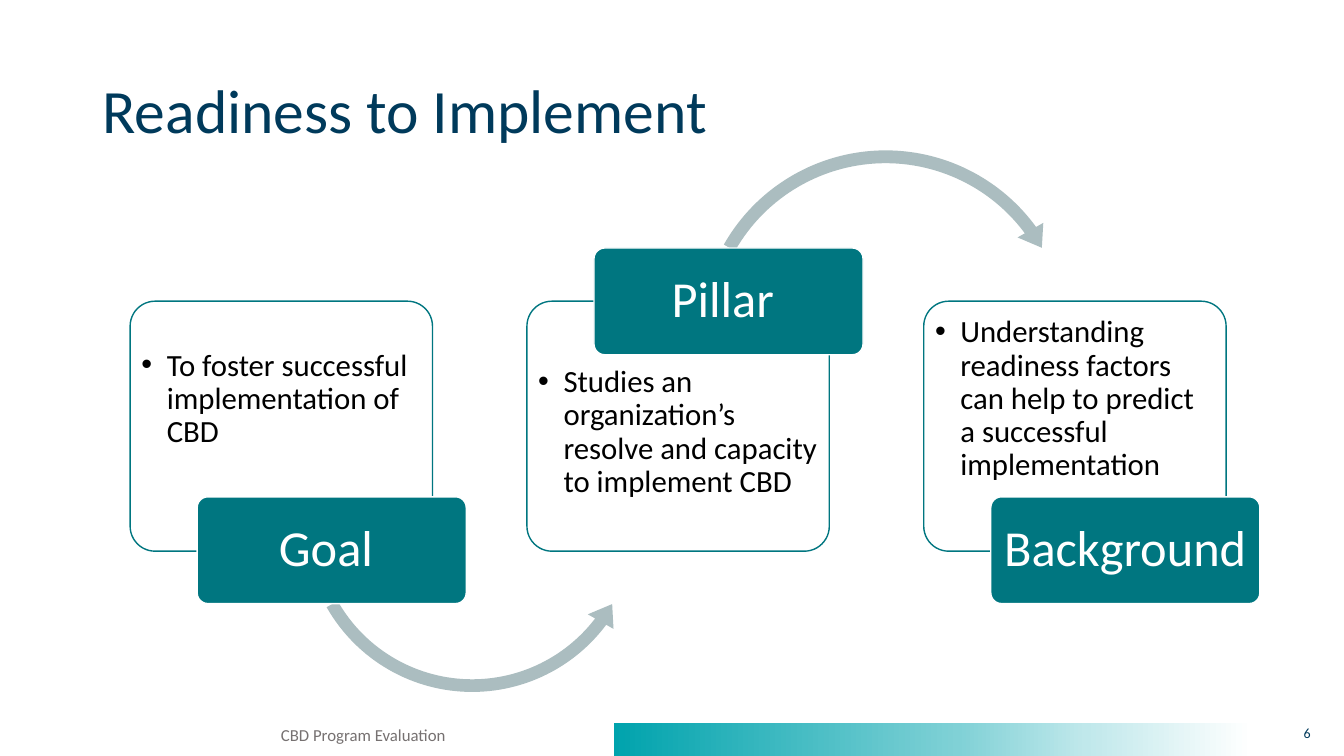
from lxml import etree
from pptx import Presentation
from pptx.dml.color import RGBColor
from pptx.enum.shapes import MSO_SHAPE
from pptx.enum.text import MSO_ANCHOR, PP_ALIGN
from pptx.oxml.ns import qn
from pptx.util import Cm, Pt

NAVY = RGBColor(0x00, 0x3A, 0x5B)
TEAL = RGBColor(0x00, 0x76, 0x80)
SILVER = RGBColor(0xAB, 0xBD, 0xC0)
GREY = RGBColor(0x76, 0x71, 0x71)
WHITE = RGBColor(0xFF, 0xFF, 0xFF)
BLACK = RGBColor(0x00, 0x00, 0x00)
BAND_STOPS = [(0, "00A3AD"), (54, "80D1D6"), (74, "C0E8EB"), (100, "FFFFFF")]

RECTANGLE = MSO_SHAPE.RECTANGLE
ROUNDED = MSO_SHAPE.ROUNDED_RECTANGLE
ARC_OVER = MSO_SHAPE.CIRCULAR_ARROW
ARC_UNDER = MSO_SHAPE.LEFT_CIRCULAR_ARROW
TOP, MIDDLE = MSO_ANCHOR.TOP, MSO_ANCHOR.MIDDLE
LEFT, CENTER, RIGHT = PP_ALIGN.LEFT, PP_ALIGN.CENTER, PP_ALIGN.RIGHT

FIRST_LEFT, COLUMN_STEP = 3.28, 10
CARD_TOP, CARD_WIDTH, CARD_HEIGHT = 7.59, 7.62, 6.3
LABEL_SHIFT, LABEL_WIDTH, LABEL_HEIGHT = 1.69, 6.78, 2.69
LABEL_HIGH, LABEL_LOW = 6.25, 12.52
CARD_INSET, CLEAR_OF_LABEL = 0.1, 1.45

STAGES = [
    ("Goal ", "To foster successful implementation of CBD", LABEL_LOW, MIDDLE,
     (ARC_UNDER, 7.47, 8.79, 8.86, [0.036, 4.475, 22.231, 90.245, 0.042])),
    ("Pillar ", "Studies an organization’s resolve and capacity to implement CBD",
     LABEL_HIGH, TOP,
     (ARC_OVER, 17.42, 3.58, 9.8, [0.033, 4.015, 194.229, 125.755, 0.038])),
    ("Background ",
     "Understanding readiness factors can help to predict a successful implementation",
     LABEL_LOW, MIDDLE, None),
]
FOOTERS = [
    ("CBD Program Evaluation ", 3.58, 11.25, 12, GREY, CENTER),
    ("6", 31.55, 1.73, 10, NAVY, RIGHT),
]


def add_block(kind, left, top, width, height, fill, line=None):
    block = slide.shapes.add_shape(kind, Cm(left), Cm(top), Cm(width), Cm(height))
    block.shadow.inherit = False
    block.fill.solid()
    block.fill.fore_color.rgb = fill
    if line is None:
        block.line.fill.background()
    else:
        block.line.color.rgb = line
        block.line.width = Pt(1)
    return block


def write(frame, text, size, color, align, bullet=False, spacing=0.9, **frame_format):
    for name, value in {"word_wrap": True, **frame_format}.items():
        setattr(frame, name, value)
    paragraph = frame.paragraphs[0]
    paragraph.text = text
    paragraph.alignment = align
    paragraph.line_spacing = spacing
    if bullet:
        properties = paragraph._p.get_or_add_pPr()
        properties.set("marL", str(Cm(0.64)))
        properties.set("indent", str(-Cm(0.64)))
        etree.SubElement(properties, qn("a:buFont")).set("typeface", "Arial")
        etree.SubElement(properties, qn("a:buChar")).set("char", "•")
    font = paragraph.runs[0].font
    font.color.rgb = color
    for name, value in {"name": "Calibri", "size": Pt(size)}.items():
        setattr(font, name, value)


prs = Presentation()
prs.slide_width, prs.slide_height = Cm(33.87), Cm(19.05)
slide = prs.slides.add_slide(prs.slide_layouts[5])

band = add_block(RECTANGLE, 15.47, 18.21, 16.08, 0.84, WHITE)
band.fill.gradient()
band.fill.gradient_angle = 0
stop_list = band._element.spPr.find(qn("a:gradFill")).find(qn("a:gsLst"))
for stop in list(stop_list):
    stop_list.remove(stop)
for percent, shade in BAND_STOPS:
    stop = etree.SubElement(stop_list, qn("a:gs"))
    stop.set("pos", str(percent * 1000))
    etree.SubElement(stop, qn("a:srgbClr")).set("val", shade)

title = slide.shapes.title
title_place = {"left": 2.33, "top": 1.01, "width": 29.21, "height": 3.68}
for side, length in title_place.items():
    setattr(title, side, Cm(length))
write(title.text_frame, "Readiness to Implement", 44, NAVY, LEFT,
      vertical_anchor=MIDDLE)

for column, (name, description, label_top, anchor, arc) in enumerate(STAGES):
    left = FIRST_LEFT + column * COLUMN_STEP
    label_above = label_top == LABEL_HIGH

    card = add_block(ROUNDED, left, CARD_TOP, CARD_WIDTH, CARD_HEIGHT, WHITE, TEAL)
    card.adjustments[0] = 0.1
    write(card.text_frame, description, 22, BLACK, LEFT, bullet=True,
          vertical_anchor=anchor,
          margin_left=Cm(CARD_INSET), margin_right=Cm(CARD_INSET),
          margin_top=Cm(CLEAR_OF_LABEL if label_above else CARD_INSET),
          margin_bottom=Cm(CARD_INSET if label_above else CLEAR_OF_LABEL))

    if arc:
        kind, arc_left, arc_top, diameter, bends = arc
        arrow = add_block(kind, arc_left, arc_top, diameter, diameter, SILVER)
        for index, bend in enumerate(bends):
            arrow.adjustments[index] = bend

    label = add_block(ROUNDED, left + LABEL_SHIFT, label_top,
                      LABEL_WIDTH, LABEL_HEIGHT, TEAL, WHITE)
    label.adjustments[0] = 0.1
    write(label.text_frame, name, 36, WHITE, CENTER, vertical_anchor=MIDDLE,
          margin_left=Cm(0.18), margin_right=Cm(0.18))

for text, left, width, size, color, align in FOOTERS:
    footer = slide.shapes.add_textbox(Cm(left), Cm(18.14), Cm(width), Cm(0.89))
    write(footer.text_frame, text, size, color, align, spacing=1.0)

prs.save("out.pptx")
